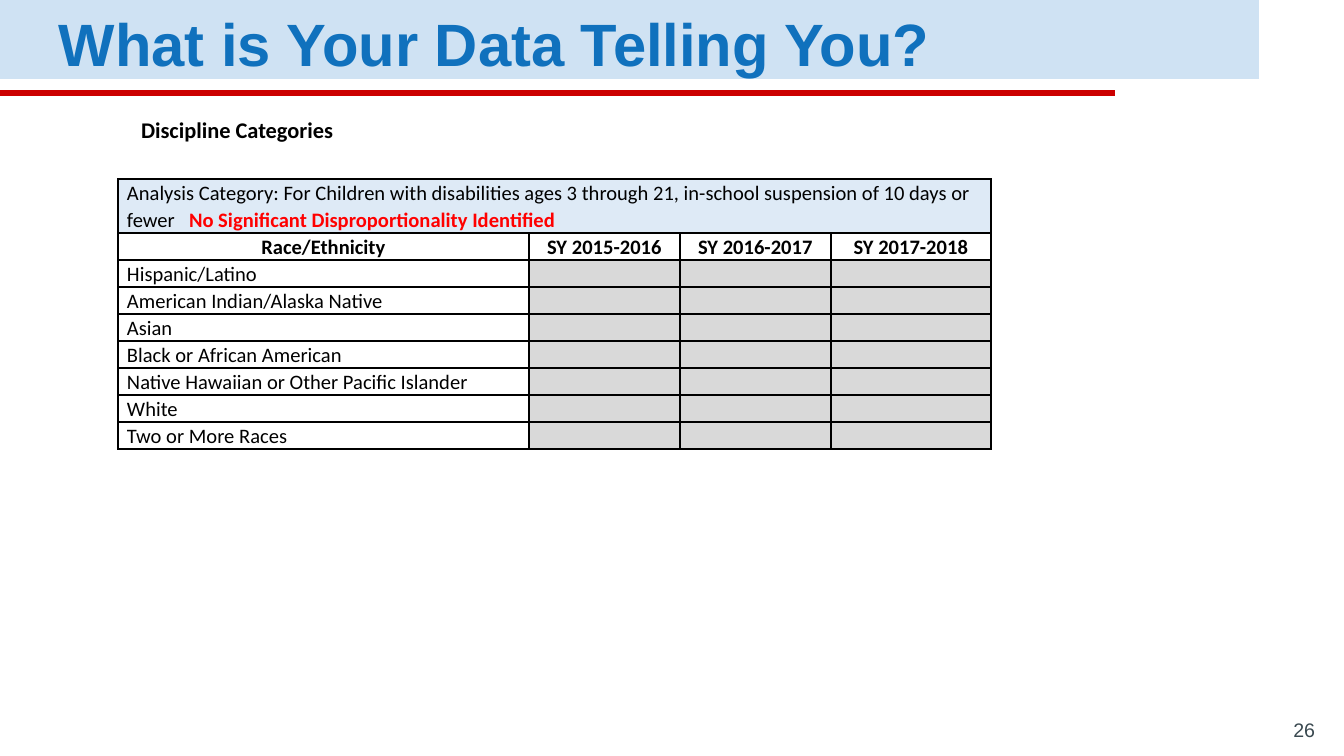
from lxml.etree import SubElement
from pptx import Presentation
from pptx.dml.color import RGBColor
from pptx.enum.shapes import MSO_SHAPE as Shape
from pptx.enum.text import MSO_ANCHOR as Anchor, PP_ALIGN as Align
from pptx.oxml.ns import qn
from pptx.util import Emu, Pt

SLIDE_WIDTH, SLIDE_HEIGHT = 1344, 756
SCALE = 9144000 / SLIDE_WIDTH
BLACK = RGBColor(0x00, 0x00, 0x00)
PALE_BLUE = RGBColor(0xCF, 0xE2, 0xF3)
RULE_RED = RGBColor(0xCC, 0x00, 0x00)
TITLE_BLUE = RGBColor(0x10, 0x71, 0xBD)
SLATE = RGBColor(0x3A, 0x49, 0x50)
CATEGORY_BLUE = RGBColor(0xDE, 0xEA, 0xF6)
FINDING_RED = RGBColor(0xFF, 0x00, 0x00)
GREY = RGBColor(0xD9, 0xD9, 0xD9)

CATEGORY = ("Analysis Category: For Children with disabilities ages 3 through 21, "
            "in-school suspension of 10 days or fewer")
FINDING = "No Significant Disproportionality Identified"
HEADINGS = ["Race/Ethnicity", "SY 2015-2016", "SY 2016-2017", "SY 2017-2018"]
GROUPS = ["Hispanic/Latino", "American Indian/Alaska Native", "Asian",
          "Black or African American", "Native Hawaiian or Other Pacific Islander",
          "White", "Two or More Races"]
COLUMN_WIDTHS = [411, 151, 151, 160]
ROW_HEIGHT = 27
CELL_SIZE = 11


def px(length):
    return Emu(round(length * SCALE))


def box(*lengths):
    return [px(length) for length in lengths]


def style(run, size, color, font="Calibri", bold=False):
    run.font.name = font
    run.font.size = Pt(size)
    run.font.bold = bold
    run.font.color.rgb = color


def add_band(slide, bounds, color):
    band = slide.shapes.add_shape(Shape.RECTANGLE, *box(*bounds))
    band.shadow.inherit = False
    band.fill.solid()
    band.fill.fore_color.rgb = color
    band.line.fill.background()


def add_label(slide, bounds, text, size, color, font, bold=False,
              anchor=Anchor.MIDDLE, align=Align.LEFT, inset=13):
    frame = slide.shapes.add_textbox(*box(*bounds)).text_frame
    frame.word_wrap = True
    frame.vertical_anchor = anchor
    frame.margin_top = frame.margin_bottom = px(inset)
    frame.margin_left = frame.margin_right = px(13)
    frame.text = text
    line = frame.paragraphs[0]
    line.alignment = align
    style(line.runs[0], size, color, font, bold)
    return line


def add_borders(cell):
    properties = cell._tc.get_or_add_tcPr()
    for side in ("lnL", "lnR", "lnT", "lnB"):
        border = SubElement(properties, qn(f"a:{side}"), w=str(Pt(1)))
        fill = SubElement(border, qn("a:solidFill"))
        SubElement(fill, qn("a:srgbClr"), val=str(BLACK))


def prepare_cell(cell):
    cell.margin_left = cell.margin_right = px(9)
    cell.margin_top = cell.margin_bottom = 0
    add_borders(cell)
    cell.fill.background()


def shade(cell, color):
    cell.fill.solid()
    cell.fill.fore_color.rgb = color


def write_cell(cell, text, bold=False, align=Align.LEFT):
    cell.text = text
    line = cell.text_frame.paragraphs[0]
    line.alignment = align
    line.line_spacing = 1.07
    style(line.runs[0], CELL_SIZE, BLACK, bold=bold)
    return line


def leave_empty(cell):
    shade(cell, GREY)
    line = cell.text_frame.paragraphs[0]
    SubElement(line._p, qn("a:endParaRPr"), sz=str(CELL_SIZE * 100))


def write_category(cell):
    shade(cell, CATEGORY_BLUE)
    line = write_cell(cell, CATEGORY + "\t")
    stops = SubElement(line._p.get_or_add_pPr(), qn("a:tabLst"))
    SubElement(stops, qn("a:tab"), pos=str(px(62)), algn="l")
    finding = line.add_run()
    finding.text = FINDING
    style(finding, CELL_SIZE, FINDING_RED, bold=True)


def add_discipline_table(slide):
    row_count = len(GROUPS) + 2
    bounds = box(118, 179, sum(COLUMN_WIDTHS), ROW_HEIGHT * (row_count + 1))
    table = slide.shapes.add_table(row_count, len(HEADINGS), *bounds).table
    table.first_row = table.horz_banding = False
    for column, width in zip(table.columns, COLUMN_WIDTHS):
        column.width = px(width)
    for row in table.rows:
        row.height = px(ROW_HEIGHT)
    table.rows[0].height = px(2 * ROW_HEIGHT)
    for cell in table.iter_cells():
        prepare_cell(cell)
    table.cell(0, 0).merge(table.cell(0, len(HEADINGS) - 1))
    write_category(table.cell(0, 0))
    for column, heading in enumerate(HEADINGS):
        write_cell(table.cell(1, column), heading, True, Align.CENTER)
    for row, group in enumerate(GROUPS, 2):
        write_cell(table.cell(row, 0), group)
        for column in range(1, len(HEADINGS)):
            leave_empty(table.cell(row, column))


def main():
    deck = Presentation()
    deck.slide_width, deck.slide_height = box(SLIDE_WIDTH, SLIDE_HEIGHT)
    slide = deck.slides.add_slide(deck.slide_layouts[6])
    add_band(slide, (0, 0, 1259, 79), PALE_BLUE)
    add_band(slide, (0, 90, 1115, 6), RULE_RED)
    title = add_label(slide, (46, 4, 1213, 66), "What is Your Data Telling You?",
                      32, TITLE_BLUE, "Arial", True)
    title.line_spacing = 1.15
    title.space_after = Pt(16)
    add_label(slide, (1247, 718, 81, 35), "26", 10.5, SLATE, "Arial",
              anchor=Anchor.BOTTOM, align=Align.RIGHT)
    add_discipline_table(slide)
    add_label(slide, (128, 110, 1216, 40), "Discipline Categories",
              12, BLACK, "Calibri", True, inset=6)
    deck.save("out.pptx")


if __name__ == "__main__":
    main()
